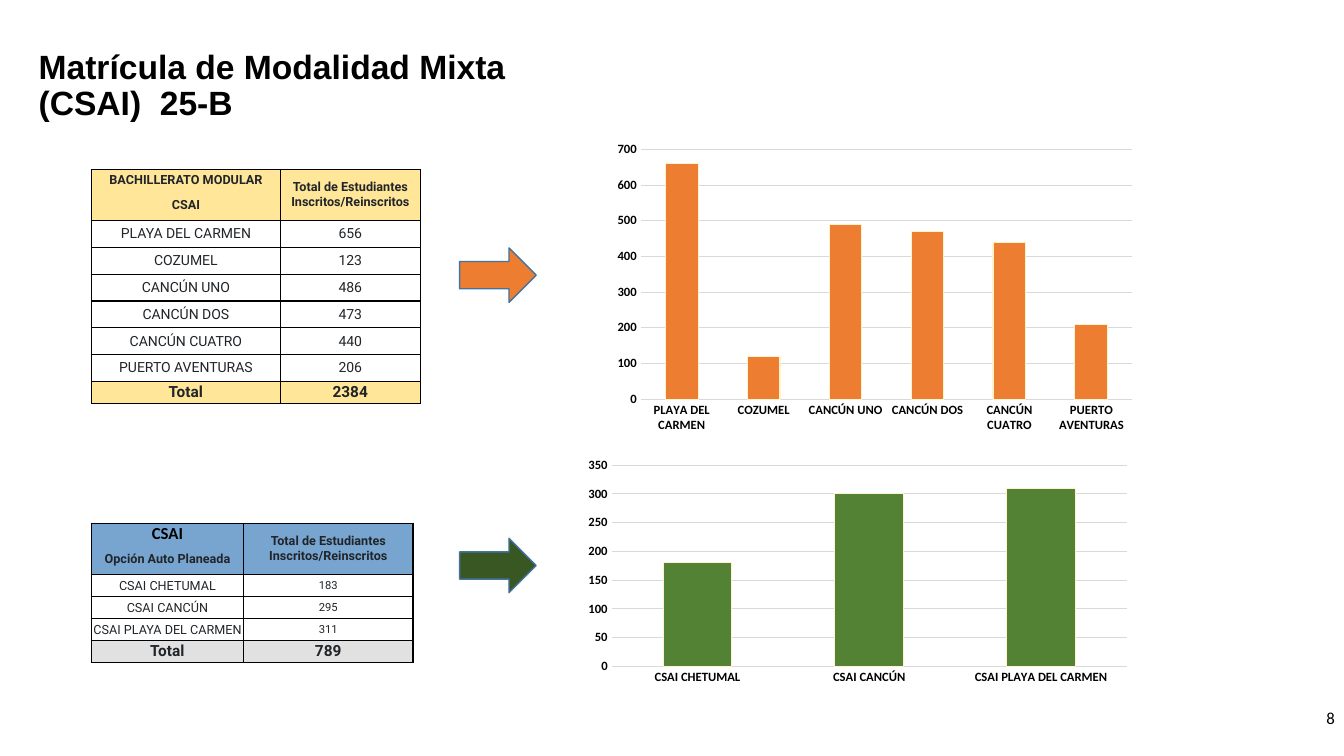
from lxml.etree import SubElement
from pptx import Presentation
from pptx.chart.data import CategoryChartData
from pptx.dml.color import RGBColor
from pptx.enum.chart import XL_CHART_TYPE, XL_TICK_MARK
from pptx.enum.shapes import MSO_SHAPE
from pptx.enum.text import MSO_ANCHOR, PP_ALIGN
from pptx.oxml import parse_xml
from pptx.oxml.ns import nsdecls, qn
from pptx.util import Inches, Pt

COLORS = {
    "black": "000000", "ink": "212529", "grid": "D9D9D9", "cream": "FFF2CC",
    "yellow": "FFE699", "blue": "77A5CF", "gray": "E1E1E1", "outline": "43739E",
    "orange": "ED7D31", "green": "548235", "dark green": "385723",
}
COLUMNS, ROWS = 160, 90  # grid that covers the slide

MODULAR = [("PLAYA DEL CARMEN", 656), ("COZUMEL", 123), ("CANCÚN UNO", 486),
           ("CANCÚN DOS", 473), ("CANCÚN CUATRO", 440), ("PUERTO AVENTURAS", 206)]
PLANNED = [("CSAI CHETUMAL", 183), ("CSAI CANCÚN", 295), ("CSAI PLAYA DEL CARMEN", 311)]
STUDENTS = "Total de Estudiantes Inscritos/Reinscritos"


def color(name):
    return RGBColor.from_string(COLORS[name])


def style_font(font, size, name, ink="black", bold=False):
    font.size, font.name, font.bold = Pt(size), name, bold
    font.color.rgb = color(ink)


def write(frame, text, align=PP_ALIGN.LEFT, spacing=None, **font):
    frame.word_wrap = True
    para = frame.paragraphs[0]
    para.text = text
    para.alignment = align
    para.line_spacing = spacing
    for span in para.runs:
        style_font(span.font, **font)
    if not text:  # keeps an empty cell from stretching its row
        SubElement(para._p, qn("a:endParaRPr")).set("sz", str(font["size"] * 100))


class SlideBuilder:
    def __init__(self, deck):
        self.slide = deck.slides.add_slide(deck.slide_layouts[6])
        self.column = deck.slide_width / COLUMNS
        self.row = deck.slide_height / ROWS

    def place(self, left, top, width, height):
        return (round(left * self.column), round(top * self.row),
                round(width * self.column), round(height * self.row))

    def text(self, area, text, **style):
        box = self.slide.shapes.add_textbox(*self.place(*area))
        box.text_frame.vertical_anchor = MSO_ANCHOR.MIDDLE
        write(box.text_frame, text, **style)

    def arrow(self, area, fill):
        arrow = self.slide.shapes.add_shape(MSO_SHAPE.RIGHT_ARROW, *self.place(*area))
        arrow.shadow.inherit = False
        arrow.fill.solid()
        arrow.fill.fore_color.rgb = color(fill)
        arrow.line.color.rgb = color("outline")
        arrow.line.width = Pt(1)

    def cell(self, cell, text, fill=None, sides="LRTB", **style):
        cell.margin_left = cell.margin_right = cell.margin_top = cell.margin_bottom = 0
        cell.vertical_anchor = MSO_ANCHOR.MIDDLE
        if fill:
            cell.fill.solid()
            cell.fill.fore_color.rgb = color(fill)
        else:
            cell.fill.background()
        write(cell.text_frame, text, align=PP_ALIGN.CENTER, **style)
        properties = cell._tc.get_or_add_tcPr()
        for index, side in enumerate("LRTB"):
            paint = (f'<a:solidFill><a:srgbClr val="{COLORS["black"]}"/></a:solidFill>'
                     if side in sides else "<a:noFill/>")
            properties.insert(index, parse_xml(
                f'<a:ln{side} {nsdecls("a")} w="{Pt(1)}">{paint}</a:ln{side}>'))

    def table(self, left, top, widths, heights, heading, records,
              header_fill, total_fill, label_size, value_size):
        """heading holds two (text, style) pairs that share the first column."""
        area = self.place(left, top, sum(widths), sum(heights))
        table = self.slide.shapes.add_table(len(heights), 2, *area).table
        table.first_row = table.horz_banding = False
        for column, width in zip(table.columns, widths):
            column.width = round(width * self.column)
        for row, height in zip(table.rows, heights):
            row.height = round(height * self.row)

        # Header: two stacked labels beside one merged cell
        bold = dict(size=9, name="Roboto", ink="ink", bold=True)
        table.cell(0, 1).merge(table.cell(1, 1))
        for index, (label, style) in enumerate(heading):
            sides = ("LRT", "LRB")[index]
            self.cell(table.cell(index, 0), label, header_fill, sides, **{**bold, **style})
            self.cell(table.cell(index, 1), STUDENTS if index == 0 else "",
                      header_fill, sides, **bold)

        # Records and total
        plain = {**bold, "bold": False}
        for index, (label, value) in enumerate(records, start=2):
            self.cell(table.cell(index, 0), label, **{**plain, "size": label_size})
            self.cell(table.cell(index, 1), str(value), **{**plain, "size": value_size})
        total = sum(value for _, value in records)
        for index, text in enumerate(("Total", str(total))):
            self.cell(table.cell(len(heights) - 1, index), text, total_fill,
                      **{**bold, "size": 11})

    def chart(self, area, records, fill, top_value, step, plot_area=None):
        data = CategoryChartData()
        data.categories = [label for label, _ in records]
        data.add_series("Estudiantes", [round(value, -1) for _, value in records])
        chart = self.slide.shapes.add_chart(
            XL_CHART_TYPE.COLUMN_CLUSTERED, *self.place(*area), data).chart
        chart.has_legend = chart.has_title = False
        style_font(chart.font, 10, "Calibri")
        plot = chart.plots[0]
        plot.gap_width, plot.vary_by_categories = 150, False
        bars = plot.series[0].format
        bars.fill.solid()
        bars.fill.fore_color.rgb = color(fill)
        bars.line.color.rgb = color("cream")
        bars.line.width = Pt(0.75)

        for axis in (chart.category_axis, chart.value_axis):
            axis.major_tick_mark = axis.minor_tick_mark = XL_TICK_MARK.NONE
            axis.format.line.fill.background()
            style_font(axis.tick_labels.font, 9, "Calibri", bold=True)
        values = chart.value_axis
        values.minimum_scale, values.maximum_scale, values.major_unit = 0, top_value, step
        values.major_gridlines.format.line.color.rgb = color("grid")
        values.major_gridlines.format.line.width = Pt(0.75)
        if plot_area:
            self.fix_plot(chart, plot_area)

    def fix_plot(self, chart, shares):
        """Set the inner plot area as shares of the chart."""
        plot_xml = chart._chartSpace.chart.plotArea
        for old in plot_xml.findall(qn("c:layout")):
            plot_xml.remove(old)
        layout = parse_xml(f'<c:layout {nsdecls("c")}/>')
        plot_xml.insert(0, layout)
        manual = SubElement(layout, qn("c:manualLayout"))
        settings = [("layoutTarget", "inner"), ("xMode", "edge"), ("yMode", "edge"),
                    *zip("xywh", shares)]
        for tag, value in settings:
            SubElement(manual, qn(f"c:{tag}")).set("val", str(value))


def main():
    deck = Presentation()
    deck.slide_width, deck.slide_height = Inches(40 / 3), Inches(7.5)
    page = SlideBuilder(deck)

    # Title and page number
    page.text((3.42, 0.4, 156.5, 19.9), "Matrícula de Modalidad Mixta\v(CSAI)  25-B",
              spacing=0.9, size=24, name="Arial", bold=True)
    page.text((124.1, 83, 36, 4.8), "8", align=PP_ALIGN.RIGHT, size=12, name="Calibri")

    # Enrolment tables
    page.table(10.88, 20.16, (22.5, 16.65), [2.5, 3.5] + [3.19] * len(MODULAR) + [2.64],
               [("BACHILLERATO MODULAR", {}), ("CSAI", {})], MODULAR,
               "yellow", "yellow", label_size=10, value_size=10)
    page.table(10.88, 62.3, (18.1, 20.2), [2.5, 3.5] + [2.62] * (len(PLANNED) + 1),
               [("CSAI", dict(size=12, name="Calibri", ink="black")),
                ("Opción Auto Planeada", {})], PLANNED,
               "blue", "gray", label_size=9, value_size=8)

    # Column charts
    page.chart((72.24, 16.2, 63.84, 36), MODULAR, "orange", 700, 100)
    page.chart((68.04, 53.16, 68.16, 31.56), PLANNED, "green", 350, 50,
               (0.07, 0.07, 0.9, 0.76))

    # Arrows from tables to charts
    for top, fill in ((29.52, "orange"), (64.08, "dark green")):
        page.arrow((54.72, top, 9.12, 6.48), fill)

    deck.save("out.pptx")


if __name__ == "__main__":
    main()
